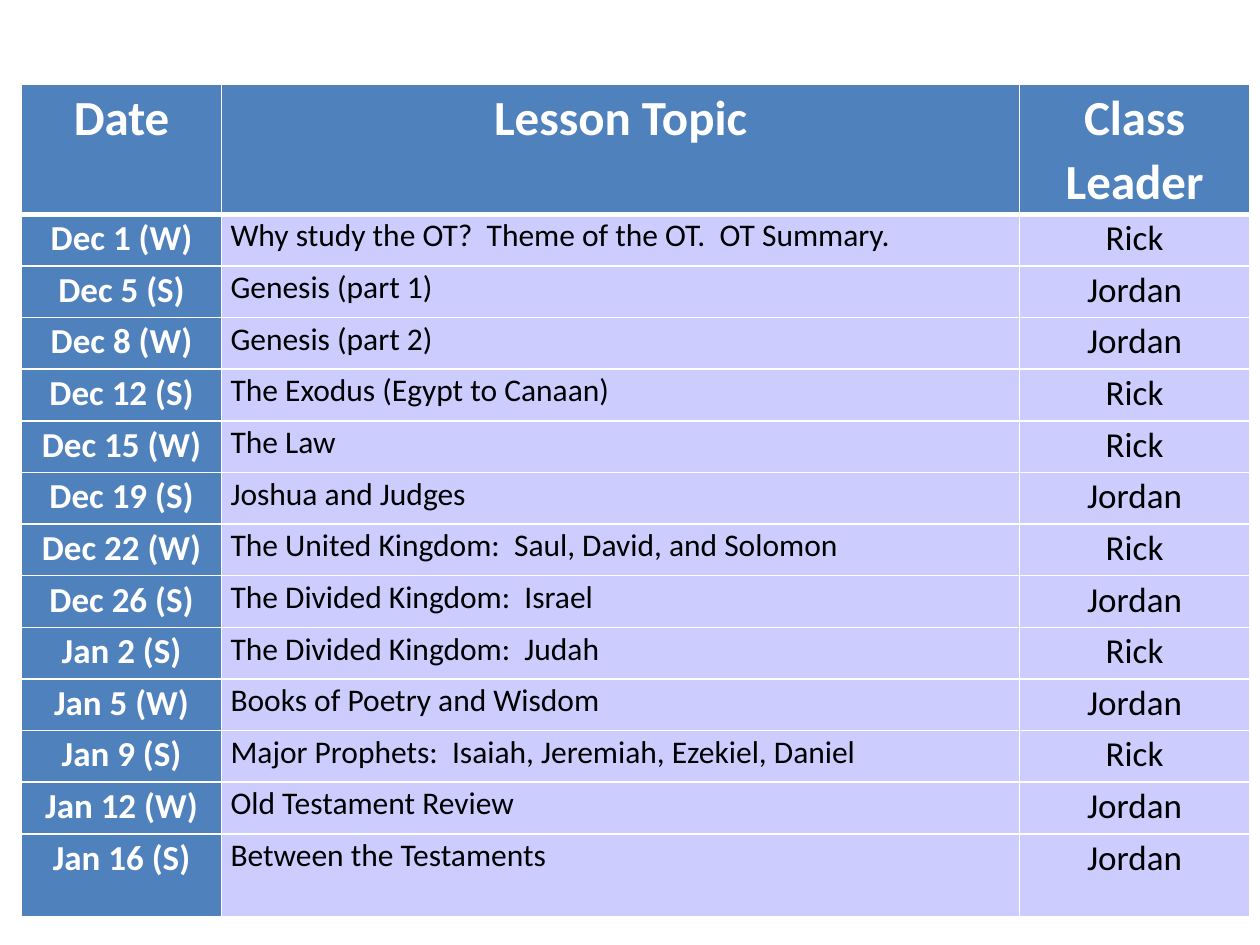
from lxml import etree
from pptx import Presentation
from pptx.dml.color import RGBColor
from pptx.enum.text import PP_ALIGN
from pptx.oxml.ns import qn
from pptx.util import Inches, Pt

LEFT, CENTER = PP_ALIGN.LEFT, PP_ALIGN.CENTER
WHITE = RGBColor(0xFF, 0xFF, 0xFF)
BLACK = RGBColor(0, 0, 0)
BLUE = RGBColor(0x4F, 0x81, 0xBD)
LILAC = RGBColor(0xCC, 0xCC, 0xFF)
FONT = "Calibri"

HEADS = ["Date", "Lesson Topic", "Class Leader"]
LESSONS = [
    ("Dec 1 (W)", "Why study the OT?  Theme of the OT.  OT Summary.", "Rick"),
    ("Dec 5 (S)", "Genesis (part 1)", "Jordan"),
    ("Dec 8 (W)", "Genesis (part 2)", "Jordan"),
    ("Dec 12 (S)", "The Exodus (Egypt to Canaan)", "Rick"),
    ("Dec 15 (W)", "The Law", "Rick"),
    ("Dec 19 (S)", "Joshua and Judges", "Jordan"),
    ("Dec 22 (W)", "The United Kingdom:  Saul, David, and Solomon", "Rick"),
    ("Dec 26 (S)", "The Divided Kingdom:  Israel", "Jordan"),
    ("Jan 2 (S)", "The Divided Kingdom:  Judah", "Rick"),
    ("Jan 5 (W)", "Books of Poetry and Wisdom", "Jordan"),
    ("Jan 9 (S)", "Major Prophets:  Isaiah, Jeremiah, Ezekiel, Daniel", "Rick"),
    ("Jan 12 (W)", "Old Testament Review", "Jordan"),
    ("Jan 16 (S)", "Between the Testaments", "Jordan"),
]
COLS = [1.59, 6.33, 1.83]
ROWS = [1.03] + [0.41] * (len(LESSONS) - 1) + [0.66]


def write(cell, text, size=20, color=BLACK, bold=False, align=CENTER):
    cell.margin_left = cell.margin_right = Inches(0.07)
    cell.margin_top = cell.margin_bottom = 0
    para = cell.text_frame.paragraphs[0]
    para.alignment = align
    para.line_spacing = 1.07
    run = para.add_run()
    run.text = text
    font = run.font
    font.name, font.size, font.bold = FONT, Pt(size), bold
    font.color.rgb = color


def border(cell, top=1, bottom=1):
    """Draw white lines around a cell, with widths in points."""
    props = cell._tc.get_or_add_tcPr()
    for side, width in (("L", 1), ("R", 1), ("T", top), ("B", bottom)):
        line = etree.SubElement(props, qn(f"a:ln{side}"), w=str(Pt(width)))
        fill = etree.SubElement(line, qn("a:solidFill"))
        etree.SubElement(fill, qn("a:srgbClr"), val=str(WHITE))


def paint(cell, color):
    cell.fill.solid()
    cell.fill.fore_color.rgb = color


def schedule(slide, left, top, width, height):
    frame = slide.shapes.add_table(len(ROWS), len(COLS), left, top, width, height)
    table = frame.table
    for col, size in zip(table.columns, COLS):
        col.width = Inches(size)
    for row, size in zip(table.rows, ROWS):
        row.height = Inches(size)

    # Header row, set off by a thick rule
    for cell, text in zip(table.rows[0].cells, HEADS):
        border(cell, bottom=3)
        paint(cell, BLUE)
        write(cell, text, size=28, color=WHITE, bold=True)

    # One row per lesson
    styles = [
        (BLUE, dict(color=WHITE, bold=True)),
        (LILAC, dict(size=18, align=LEFT)),
        (LILAC, {}),
    ]
    for r, lesson in enumerate(LESSONS, 1):
        for cell, text, (fill, style) in zip(table.rows[r].cells, lesson, styles):
            border(cell, top=3 if r == 1 else 1)
            paint(cell, fill)
            write(cell, text, **style)


def main():
    deck = Presentation()
    deck.slide_width, deck.slide_height = Inches(10), Inches(7.5)
    slide = deck.slides.add_slide(deck.slide_layouts[6])
    schedule(slide, Inches(0.17), Inches(0.67), Inches(sum(COLS)), Inches(sum(ROWS)))
    deck.save("out.pptx")


if __name__ == "__main__":
    main()
